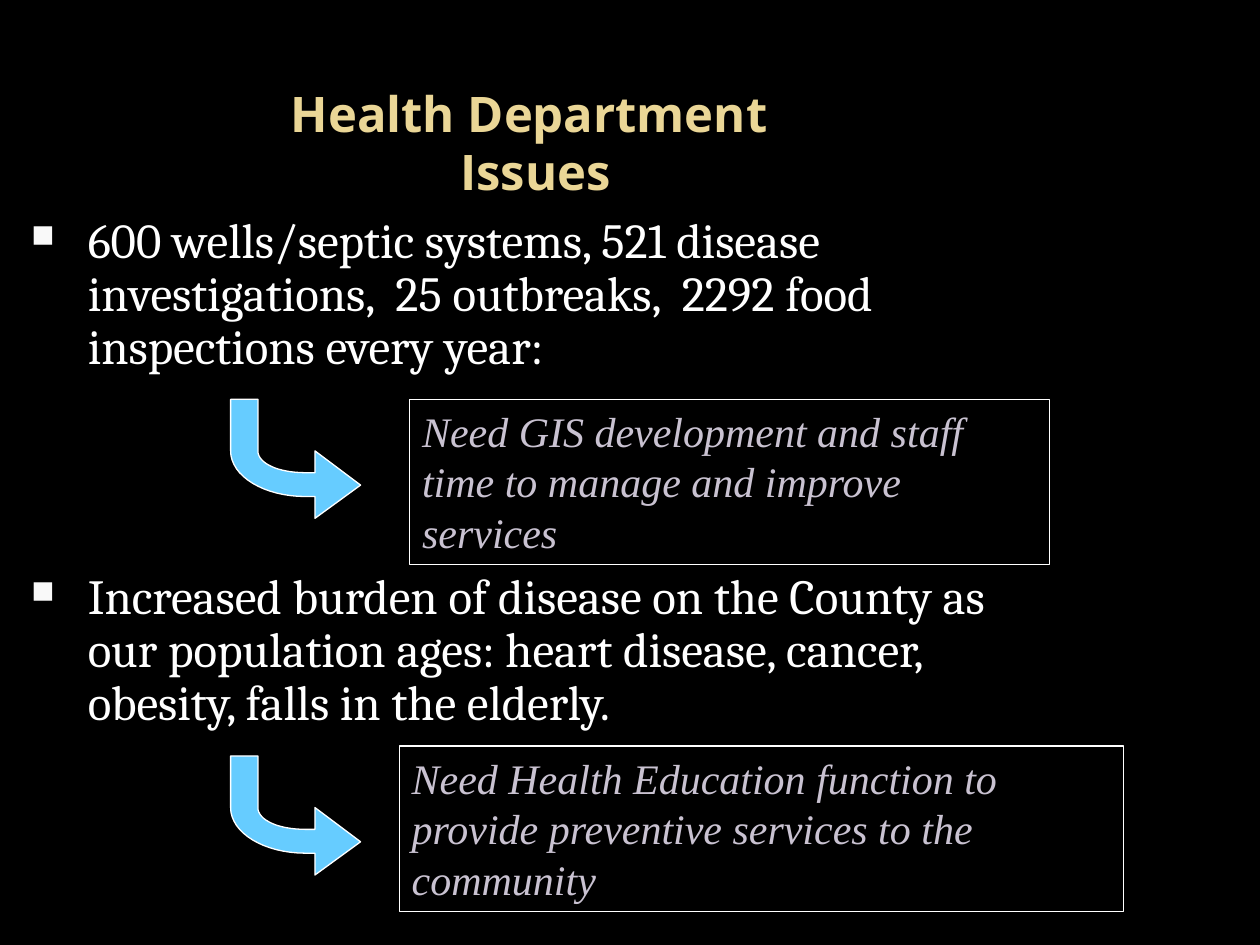
from lxml import etree
from pptx import Presentation, util as u
from pptx.dml.color import RGBColor
from pptx.enum import shapes, text
from pptx.oxml.ns import qn

BEND = [
    [(2.62, 1.73)], [(1.7, 2.4)], [(1.7, 1.96)], [(1.5, 1.96)],
    [(0.69, 1.96), (0, 1.56), (0, 1.04)],
    [(0, 0)], [(0.55, 0)], [(0.55, 1.04)],
    [(0.55, 1.3), (0.98, 1.48), (1.5, 1.48)],
    [(1.7, 1.48)], [(1.7, 1.04)],
]
ISSUES = [
    "600 wells/septic systems, 521 disease investigations,  25 outbreaks,  "
    "2292 food inspections every year:",
    "Increased burden of disease on the County as our population ages: "
    "heart disease, cancer, obesity, falls in the elderly.",
]
NEEDS = [
    ("Need GIS development and staff time to manage and improve services",
     (8.26, 8.05, 12.9, 3.33), 8.05),
    ("Need Health Education function to provide preventive services to the community",
     (8.05, 15.04, 14.6, 3.33), 15.24),
]


def paint(fill, code):
    fill.solid()
    fill.fore_color.rgb = RGBColor.from_string(code)


def curve(start, one, two, end, steps=16):
    for k in range(1, steps + 1):
        t = k / steps
        yield tuple((1 - t) ** 3 * a + 3 * (1 - t) ** 2 * t * b
                    + 3 * (1 - t) * t ** 2 * c + t ** 3 * d
                    for a, b, c, d in zip(start, one, two, end))


def trace(parts):
    dots = []
    for part in parts:
        dots += part if len(part) == 1 else curve(dots[-1], *part)
    return [(u.Cm(x), u.Cm(y)) for x, y in dots]


class Deck:
    """Holds the style and the current slide."""
    back, gold, white, mark, lilac, blue = (
        "000000", "EAD696", "FFFFFF", "F9F9F9", "C9C2D1", "66CCFF")

    def __init__(self):
        self.file = Presentation()
        self.file.slide_width, self.file.slide_height = u.Cm(25.4), u.Cm(19.05)
        self.slide = self.file.slides.add_slide(self.file.slide_layouts[6])
        paint(self.slide.background.fill, self.back)

    def style(self, para, size, face, code):
        para.font.size, para.font.name = u.Pt(size), face
        paint(para.font.fill, code)

    def frame(self, place):
        box = self.slide.shapes.add_textbox(*map(u.Cm, place))
        box.text_frame.word_wrap = True
        return box.text_frame

    def edge(self, shape):
        shape.shadow.inherit = False
        paint(shape.line.fill, self.white)
        shape.line.width = u.Pt(0.75)

    def title(self, words, place):
        frame = self.frame(place)
        frame.vertical_anchor = text.MSO_ANCHOR.MIDDLE
        para = frame.paragraphs[0]
        para.text = words
        para.alignment = text.PP_ALIGN.CENTER
        para.font.bold = True
        self.style(para, 28, "Open Sans", self.gold)

    def bullet(self, para):
        props = para._p.get_or_add_pPr()
        props.set("marL", str(u.Cm(1.52)))
        props.set("indent", str(u.Cm(-1.14)))
        tint = etree.Element(qn("a:buClr"))
        etree.SubElement(tint, qn("a:srgbClr"), val=self.mark)
        size = etree.Element(qn("a:buSzPct"), val="65000")
        sign = etree.Element(qn("a:buChar"), char="■")
        for item in (tint, size, sign):
            props.insert_element_before(item, "a:tabLst", "a:defRPr", "a:extLst")

    def list(self, items, place, gap):
        frame = self.frame(place)
        for k, words in enumerate(items):
            para = frame.add_paragraph() if k else frame.paragraphs[0]
            para.text = words
            para.line_spacing = 0.9
            para.space_before = u.Pt(gap if k else 0)
            self.style(para, 28, "Cambria", self.white)
            self.bullet(para)

    def arrow(self, left, top):
        first, *rest = trace(BEND)
        pen = self.slide.shapes.build_freeform(*first)
        pen.add_line_segments(rest, close=True)
        shape = pen.convert_to_shape(u.Cm(left), u.Cm(top))
        paint(shape.fill, self.blue)
        self.edge(shape)

    def need(self, words, place):
        shape = self.slide.shapes.add_shape(
            shapes.MSO_SHAPE.RECTANGLE, *map(u.Cm, place))
        shape.fill.background()
        self.edge(shape)
        frame = shape.text_frame
        frame.word_wrap = True
        frame.vertical_anchor = text.MSO_ANCHOR.TOP
        para = frame.paragraphs[0]
        para.text = words
        para.alignment = text.PP_ALIGN.LEFT
        para.font.italic = True
        self.style(para, 24, "Times New Roman", self.lilac)


def main():
    deck = Deck()
    deck.title("Health Department \vIssues", (0, 1.27, 21.59, 3.18))
    deck.list(ISSUES, (0, 4.24, 21.59, 11.43), 112.5)
    for words, place, top in NEEDS:
        deck.arrow(4.65, top)
        deck.need(words, place)
    deck.file.save("out.pptx")


if __name__ == "__main__":
    main()
